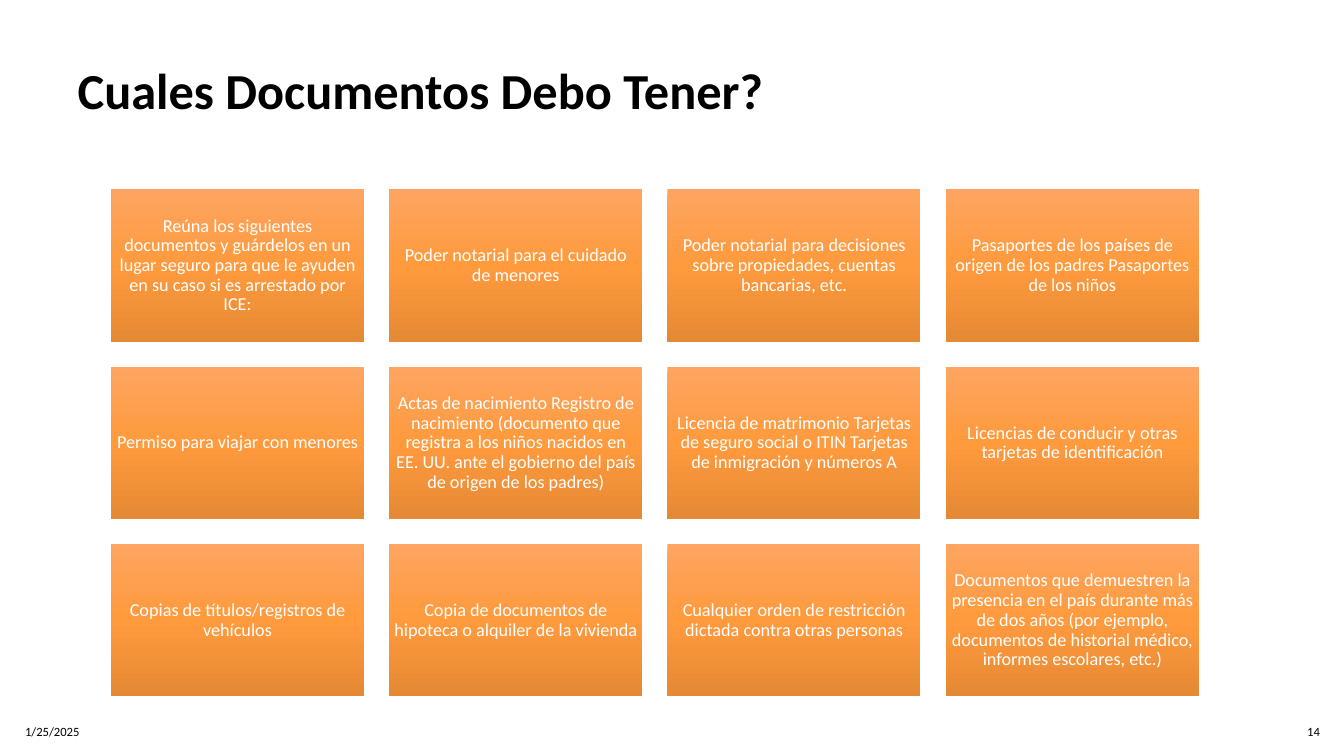
from copy import deepcopy

from pptx import Presentation
from pptx.dml.color import RGBColor
from pptx.enum import shapes, text
from pptx.oxml.ns import qn
from pptx.util import Inches, Pt

TITLE = "Cuales Documentos Debo Tener?"
DOCUMENTS = [
    "Reúna los siguientes documentos y guárdelos en un lugar seguro para que le ayuden en su caso si es arrestado por ICE:",
    "Poder notarial para el cuidado de menores",
    "Poder notarial para decisiones sobre propiedades, cuentas bancarias, etc.",
    "Pasaportes de los países de origen de los padres Pasaportes de los niños",
    "Permiso para viajar con menores",
    "Actas de nacimiento Registro de nacimiento (documento que registra a los niños nacidos en EE. UU. ante el gobierno del país de origen de los padres)",
    "Licencia de matrimonio Tarjetas de seguro social o ITIN Tarjetas de inmigración y números A",
    "Licencias de conducir y otras tarjetas de identificación",
    "Copias de títulos/registros de vehículos",
    "Copia de documentos de hipoteca o alquiler de la vivienda",
    "Cualquier orden de restricción dictada contra otras personas",
    "Documentos que demuestren la presencia en el país durante más de dos años (por ejemplo, documentos de historial médico, informes escolares, etc.)",
]
COLUMNS = 4
CARD_WIDTH, CARD_HEIGHT = 2.51, 1.51
GRID_LEFT, GRID_TOP = 1.1, 1.88
COLUMN_STEP, ROW_STEP = 2.76, 1.76


def color(value):
    return RGBColor.from_string(value)


def set_attributes(target, values):
    for name, value in values.items():
        setattr(target, name, value)


class SlideBuilder:
    font = "Calibri"
    black, white = "000000", "FFFFFF"
    card_gradient = ["FDA561", "FF9A3D", "E58934"]

    def __init__(self, slide):
        self.slide = slide

    def set_text(self, shape, content, size, ink, frame=None, paragraph=None, bold=False):
        """Fill a shape with one formatted paragraph."""
        text_frame = shape.text_frame
        text_frame.text = content
        set_attributes(text_frame, {
            "word_wrap": True,
            "auto_size": text.MSO_AUTO_SIZE.NONE,
            "vertical_anchor": text.MSO_ANCHOR.MIDDLE,
            **(frame or {}),
        })
        first = text_frame.paragraphs[0]
        set_attributes(first, paragraph or {})
        run_font = first.runs[0].font
        set_attributes(run_font, {"name": self.font, "size": Pt(size), "bold": bold})
        run_font.color.rgb = color(ink)

    def title(self, content, left, top, width, height):
        shape = self.slide.shapes.title
        set_attributes(shape, {
            "left": Inches(left), "top": Inches(top),
            "width": Inches(width), "height": Inches(height),
        })
        self.set_text(shape, content, 36, self.black,
                      frame={"vertical_anchor": text.MSO_ANCHOR.TOP},
                      paragraph={"alignment": text.PP_ALIGN.LEFT, "line_spacing": 0.9},
                      bold=True)

    def footer(self, content, left, width, alignment):
        box = self.slide.shapes.add_textbox(
            Inches(left), Inches(7.06), Inches(width), Inches(0.4))
        self.set_text(box, content, 9, self.black,
                      paragraph={"alignment": alignment, "space_after": Pt(6)})

    def card(self, content, left, top):
        shape = self.slide.shapes.add_shape(
            shapes.MSO_SHAPE.RECTANGLE, Inches(left), Inches(top),
            Inches(CARD_WIDTH), Inches(CARD_HEIGHT))
        shape.shadow.inherit = False
        shape.line.fill.background()
        self.fill_gradient(shape)
        margins = ("margin_left", "margin_top", "margin_right", "margin_bottom")
        self.set_text(shape, content, 13, self.white,
                      frame=dict.fromkeys(margins, Inches(0.05)),
                      paragraph={"alignment": text.PP_ALIGN.CENTER, "line_spacing": 0.9})

    def fill_gradient(self, shape):
        """Apply the evenly spaced card colours from top to bottom."""
        shape.fill.gradient()
        shape.fill.gradient_angle = 270
        stop_list = shape._element.spPr.find(qn("a:gradFill")).find(qn("a:gsLst"))
        stop_list.insert(1, deepcopy(stop_list[0]))
        last = len(self.card_gradient) - 1
        for index, stop in enumerate(shape.fill.gradient_stops):
            stop.position = index / last
            stop.color.rgb = color(self.card_gradient[index])


def main():
    presentation = Presentation()
    presentation.slide_width = Inches(13.33)
    presentation.slide_height = Inches(7.5)
    title_only = presentation.slide_layouts.get_by_name("Title Only")
    builder = SlideBuilder(presentation.slides.add_slide(title_only))

    builder.title(TITLE, 0.67, 0.6, 11.65, 1.24)
    builder.footer("1/25/2025", 0.15, 3.82, text.PP_ALIGN.LEFT)
    builder.footer("14", 12.72, 0.47, text.PP_ALIGN.RIGHT)
    for index, document in enumerate(DOCUMENTS):
        row, column = divmod(index, COLUMNS)
        builder.card(document, GRID_LEFT + column * COLUMN_STEP, GRID_TOP + row * ROW_STEP)

    presentation.save("out.pptx")


if __name__ == "__main__":
    main()
